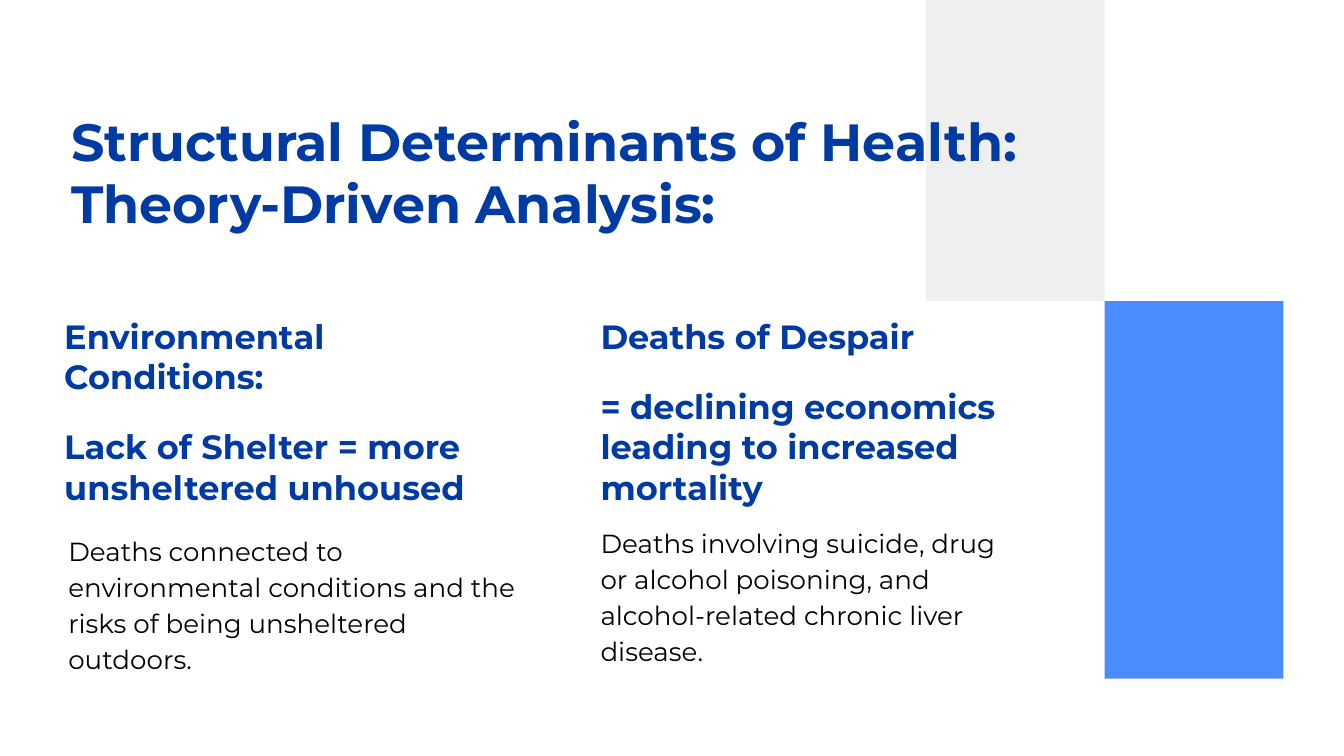
from dataclasses import dataclass

from pptx import Presentation
from pptx.dml.color import RGBColor
from pptx.enum import shapes, text
from pptx.util import Inches, Pt


@dataclass(frozen=True)
class Theme:
    font: str = "Montserrat"
    navy: str = "003BA3"
    blue: str = "4A8CFF"
    grey: str = "EFEFEF"
    black: str = "000000"
    title: int = 28
    heading: int = 18
    body: int = 14


THEME = Theme()


def write(sp, paragraphs, size, color, bold=False, line_spacing=1.0, gap=0):
    """Fill a shape with top-left text; gap separates its paragraphs."""
    tf = sp.text_frame
    tf.word_wrap = True
    tf.auto_size = text.MSO_AUTO_SIZE.NONE
    tf.vertical_anchor = text.MSO_ANCHOR.TOP
    tf.margin_left = tf.margin_right = tf.margin_top = tf.margin_bottom = Inches(0.1)
    for i, line in enumerate(paragraphs):
        p = tf.paragraphs[0] if i == 0 else tf.add_paragraph()
        p.text = line
        p.alignment = text.PP_ALIGN.LEFT
        p.line_spacing = line_spacing
        p.space_before = Pt(gap if i else 0)
        p.space_after = Pt(0)
        p.font.name = THEME.font
        p.font.size = Pt(size)
        p.font.bold = bold
        p.font.color.rgb = RGBColor.from_string(color)


def add_block(s, left, top, width, height, color):
    sp = s.shapes.add_shape(shapes.MSO_SHAPE.RECTANGLE, Inches(left), Inches(top),
                            Inches(width), Inches(height))
    sp.shadow.inherit = False
    sp.fill.solid()
    sp.fill.fore_color.rgb = RGBColor.from_string(color)
    sp.line.fill.background()
    return sp


def add_decoration(s, left, width, split, bottom):
    """Two blocks stepping down and right, meeting at the split height."""
    upper = add_block(s, left, 0, width, split, THEME.grey)
    s.shapes.title._element.addprevious(upper._element)  # behind the title
    add_block(s, left + width, split, width, bottom - split, THEME.blue)


def place_title(s, left, top, width, height, lines):
    sp = s.shapes.title
    sp.left, sp.top = Inches(left), Inches(top)
    sp.width, sp.height = Inches(width), Inches(height)
    write(sp, lines, THEME.title, THEME.navy, bold=True)


def add_text(s, left, top, width, height, paragraphs, *style, **options):
    sp = s.shapes.add_textbox(Inches(left), Inches(top), Inches(width), Inches(height))
    write(sp, paragraphs, *style, **options)


def add_column(s, left, top, width, height, headings, body, body_dx, body_dy, body_width):
    """Headings in the given box, with the body text offset from its corner."""
    add_text(s, left, top, width, height, headings, THEME.heading, THEME.navy,
             bold=True, gap=16)
    add_text(s, left + body_dx, top + body_dy, body_width, 1.4, [body],
             THEME.body, THEME.black, line_spacing=1.15)


def main():
    prs = Presentation()
    prs.slide_width = Inches(10)
    prs.slide_height = prs.slide_width * 9 // 16
    s = prs.slides.add_slide(prs.slide_layouts[5])

    place_title(s, 0.43, 0.71, 8.44, 1.4,
                ["Structural Determinants of Health:", "Theory-Driven Analysis:"])
    add_column(s, 0.38, 2.25, 3.63, 1.54,
               ["Environmental Conditions:", "Lack of Shelter = more unsheltered unhoused"],
               "Deaths connected to environmental conditions and the risks of being "
               "unsheltered outdoors.",
               body_dx=0.03, body_dy=1.6, body_width=3.55)
    add_column(s, 4.37, 2.25, 3.27, 1.4,
               ["Deaths of Despair", "= declining economics leading to increased mortality"],
               "Deaths involving suicide, drug or alcohol poisoning, and "
               "alcohol-related chronic liver disease.",
               body_dx=0, body_dy=1.54, body_width=3.27)
    add_decoration(s, left=6.89, width=1.33, split=2.24, bottom=5.05)

    prs.save("out.pptx")


if __name__ == "__main__":
    main()
